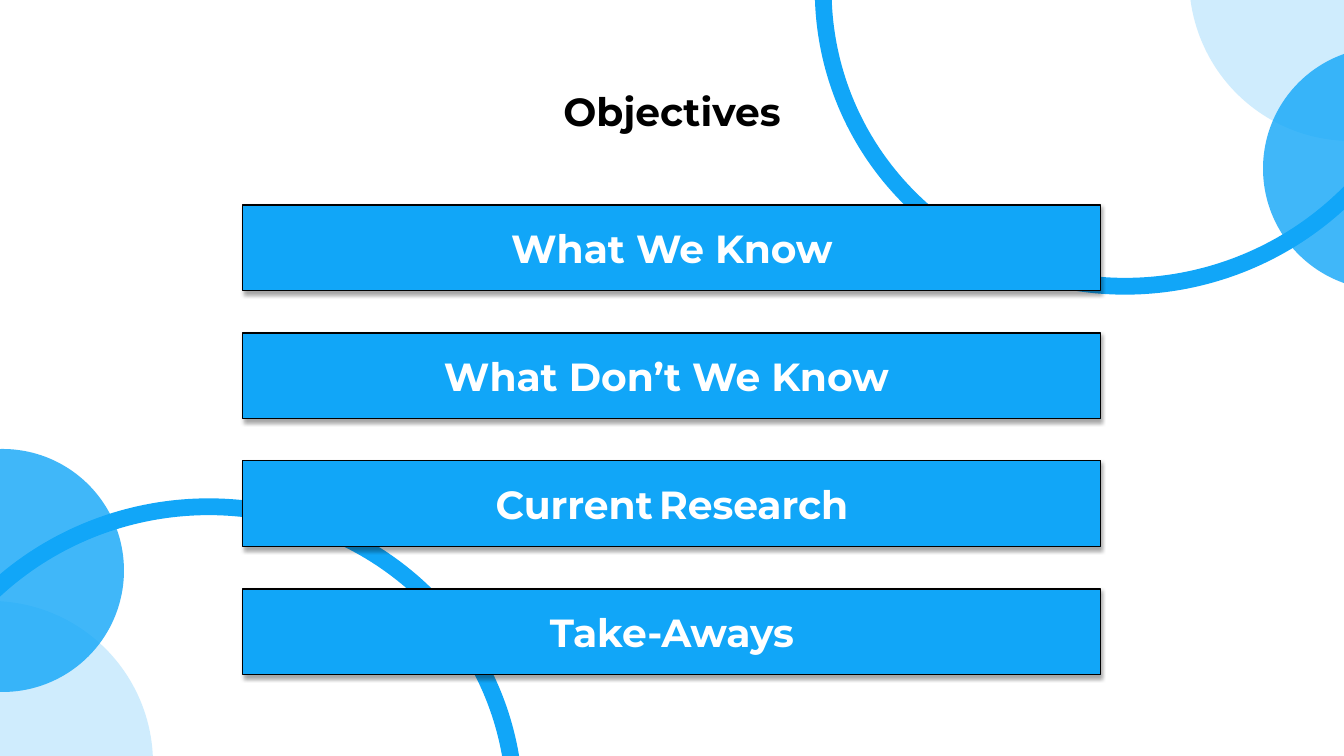
from lxml import etree
from pptx import Presentation
from pptx.dml.color import RGBColor
from pptx.enum.shapes import MSO_SHAPE
from pptx.enum.text import MSO_ANCHOR, PP_ALIGN
from pptx.oxml.ns import qn
from pptx.util import Pt

# Content: each bar is a list of (text, format) runs
TITLE = "Objectives"
SPACER = {"size": 20, "font": "Calibri", "bold": False}
BARS = [
    [("What We Know", {})],
    [("What Don’t We Know ", {})],
    [("Current", {}), (" ", SPACER), ("Research", {})],
    [("Take-Aways", {})],
]

COLORS = {"blue": "11A6F8", "pale": "A0DBFC", "white": "FFFFFF", "black": "000000"}

# Circle groups in px: rotation, then left and top of ring, pale disc, blue disc
CIRCLE_GROUPS = [
    (157, (822, -317), (1189, -184), (1263, 47)),
    (350.4, (-103, 507), (-172, 601), (-119, 449)),
]
RING_SIZE, PALE_SIZE, BLUE_SIZE = (618, 602), (325, 325), (243, 243)

# Layout in px
SLIDE_SIZE = (1344, 756)
TITLE_BOX = (0, 82, 1344, 64)
BAR_LEFT, BAR_TOP, BAR_WIDTH, BAR_HEIGHT, BAR_PITCH = 243, 205, 858, 86, 128


def px(length):
    return round(length * 914400 / 100.8)


def color(name):
    return RGBColor.from_string(COLORS[name])


def add_text(paragraph, text, size=28, font="Montserrat", bold=True, fill="white"):
    paragraph.alignment = PP_ALIGN.CENTER
    run = paragraph.add_run()
    run.text = text
    run.font.size = Pt(size)
    run.font.name = font
    run.font.bold = bold
    run.font.color.rgb = color(fill)


def add_box(slide, kind, position, size, fill, line=None, line_width=0, opacity=100):
    shape = slide.shapes.add_shape(kind, *map(px, position + size))
    shape.shadow.inherit = False
    shape.fill.solid()
    shape.fill.fore_color.rgb = color(fill)
    if opacity < 100:
        fill_color = shape._element.spPr.find(qn("a:solidFill"))[0]
        etree.SubElement(fill_color, qn("a:alpha"), val=str(opacity * 1000))
    if line:
        shape.line.color.rgb = color(line)
        shape.line.width = Pt(line_width)
    else:
        shape.line.fill.background()
    return shape


def add_shadow(shape):
    effects = shape._element.spPr.find(qn("a:effectLst"))
    shadow = etree.SubElement(effects, qn("a:outerShdw"), blurRad=str(Pt(3.1)),
                              dist=str(Pt(1.8)), dir="5400000", rotWithShape="0")
    shade = etree.SubElement(shadow, qn("a:srgbClr"), val=COLORS["black"])
    etree.SubElement(shade, qn("a:alpha"), val="35000")


def main():
    presentation = Presentation()
    presentation.slide_width, presentation.slide_height = map(px, SLIDE_SIZE)
    slide = presentation.slides.add_slide(presentation.slide_layouts[5])
    title = slide.shapes.title

    # Corner circles
    for rotation, ring, pale, blue in CIRCLE_GROUPS:
        circles = [
            add_box(slide, MSO_SHAPE.OVAL, ring, RING_SIZE, "white", "blue", 12),
            add_box(slide, MSO_SHAPE.OVAL, pale, PALE_SIZE, "pale", opacity=50),
            add_box(slide, MSO_SHAPE.OVAL, blue, BLUE_SIZE, "blue", opacity=80),
        ]
        for circle in circles:
            circle.rotation = rotation

    # Title, brought in front of the circles
    slide.shapes._spTree.append(title._element)
    title.left, title.top, title.width, title.height = map(px, TITLE_BOX)
    title.text_frame.vertical_anchor = MSO_ANCHOR.MIDDLE
    heading = title.text_frame.paragraphs[0]
    heading.line_spacing = 0.9
    add_text(heading, TITLE, fill="black")

    # Objective bars
    for index, runs in enumerate(BARS):
        position = (BAR_LEFT, BAR_TOP + index * BAR_PITCH)
        bar = add_box(slide, MSO_SHAPE.RECTANGLE, position, (BAR_WIDTH, BAR_HEIGHT),
                      "blue", "black", 0.75)
        add_shadow(bar)
        bar.text_frame.vertical_anchor = MSO_ANCHOR.MIDDLE
        for text, text_format in runs:
            add_text(bar.text_frame.paragraphs[0], text, **text_format)

    presentation.save("out.pptx")


if __name__ == "__main__":
    main()
